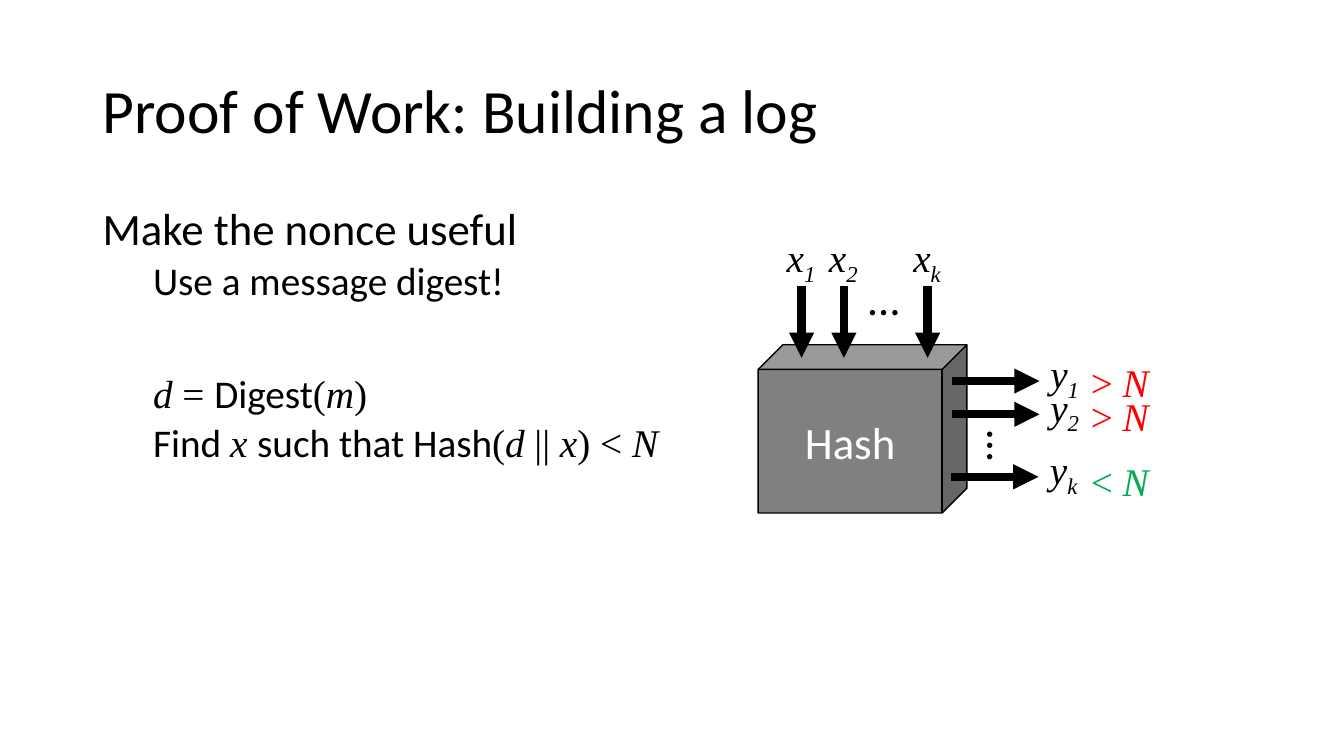
from lxml import etree
from pptx import Presentation
from pptx import util as u
from pptx.dml.color import RGBColor
from pptx.enum import shapes, text
from pptx.oxml.ns import qn

SANS, SERIF = "Calibri", "Times New Roman"
BLACK, WHITE, GRAY, RED, GREEN = "000000", "FFFFFF", "808080", "FF0000", "00B050"
STYLES = {
    "sans": (SANS, False, False),
    "serif": (SERIF, False, False),
    "var": (SERIF, True, False),
    "sub": (SERIF, True, True),
}

TITLE = [("Proof of Work: Building a log", "sans")]
BODY = [
    (32, 0, 10, [("Make the nonce useful", "sans")]),
    (28, 0.5, 5, [("Use a message digest!", "sans")]),
    (28, 0.5, 50, [("d", "var"), (" = ", "serif"), ("Digest", "sans"),
                   ("(", "serif"), ("m", "var"), (")", "serif")]),
    (28, 0.5, 5, [("Find ", "sans"), ("x ", "var"), ("such that Hash", "sans"),
                  ("(", "serif"), ("d", "var"), (" || ", "serif"),
                  ("x", "var"), (") < ", "serif"), ("N", "var")]),
]
INPUTS = [("1", 7.95), ("2", 8.37), ("k", 9.2)]
OUTPUTS = [
    ("1", 9.44, 3.78, ">", RED, 3.51),
    ("2", 9.44, 4.11, ">", RED, 3.84),
    ("k", 9.43, 4.73, "<", GREEN, 4.49),
]
DOTS = [(8.51, 2.64, 0), (9.71, 4.1, 90)]

prs = Presentation()
prs.slide_width, prs.slide_height = u.Inches(13.33), u.Inches(7.5)
s = prs.slides.add_slide(prs.slide_layouts[6])


def rgb(value):
    return RGBColor.from_string(value)


def write(p, runs, size, color=BLACK, align=text.PP_ALIGN.LEFT):
    p.alignment = align
    for content, style in runs:
        r = p.add_run()
        r.text = content
        r.font.name, r.font.italic, lowered = STYLES[style]
        r.font.size = u.Pt(size)
        r.font.color.rgb = rgb(color)
        if lowered:
            r._r.get_or_add_rPr().set("baseline", "-25000")


def add_box(x, y, w, h, wrap=True):
    sp = s.shapes.add_textbox(*map(u.Inches, (x, y, w, h)))
    sp.text_frame.word_wrap = wrap
    return sp


def add_label(x, y, w, h, runs, size, color=BLACK,
              align=text.PP_ALIGN.CENTER, wrap=True):
    sp = add_box(x, y, w, h, wrap)
    write(sp.text_frame.paragraphs[0], runs, size, color, align)
    return sp


def add_arrow(x1, y1, x2, y2):
    cx = s.shapes.add_connector(shapes.MSO_CONNECTOR.STRAIGHT,
                                *map(u.Inches, (x1, y1, x2, y2)))
    cx.line.color.rgb = rgb(BLACK)
    cx.line.width = u.Pt(6)
    etree.SubElement(cx.line._get_or_add_ln(), qn("a:tailEnd"), type="triangle")
    etree.SubElement(cx._element.spPr, qn("a:effectLst"))


title = add_label(0.92, 0.4, 11.5, 1.45, TITLE, 44, align=text.PP_ALIGN.LEFT)
title.text_frame.vertical_anchor = text.MSO_ANCHOR.MIDDLE
title.text_frame.paragraphs[0].line_spacing = 0.9

tf = add_box(0.92, 2, 11.5, 4.76).text_frame
for i, (size, indent, before, runs) in enumerate(BODY):
    p = tf.add_paragraph() if i else tf.paragraphs[0]
    p.line_spacing = 0.9
    p.space_before = u.Pt(before)
    if indent:
        p.level = 1
        p._p.get_or_add_pPr().set("marL", str(u.Inches(indent)))
    write(p, runs, size)

cube = s.shapes.add_shape(shapes.MSO_SHAPE.CUBE,
                          *map(u.Inches, (7.52, 3.42, 2.07, 1.67)))
cube.adjustments[0] = 0.147
cube.shadow.inherit = False
cube.fill.solid()
cube.fill.fore_color.rgb = rgb(GRAY)
cube.line.color.rgb = rgb(BLACK)
cube.line.width = u.Pt(1)
cube.text_frame.vertical_anchor = text.MSO_ANCHOR.MIDDLE
write(cube.text_frame.paragraphs[0], [("Hash", "sans")], 32, WHITE,
      text.PP_ALIGN.CENTER)

for index, x in INPUTS:
    add_arrow(x, 2.84, x, 3.55)
    add_label(x - 0.34, 2.27, 0.67, 0.57, [("x", "var"), (index, "sub")], 28)

for index, x, y, sign, color, test_y in OUTPUTS:
    add_arrow(x, y, x + 0.87, y)
    add_label(x + 0.82, y - 0.36, 0.6, 0.57, [("y", "var"), (index, "sub")], 28)
    add_label(10.72, test_y, 0.78, 0.57, [(sign + " ", "serif"), ("N", "var")],
              28, color, text.PP_ALIGN.LEFT, wrap=False)

for x, y, angle in DOTS:
    add_label(x, y, 0.51, 0.64, [("…", "sans")], 32).rotation = angle

prs.save("out.pptx")
